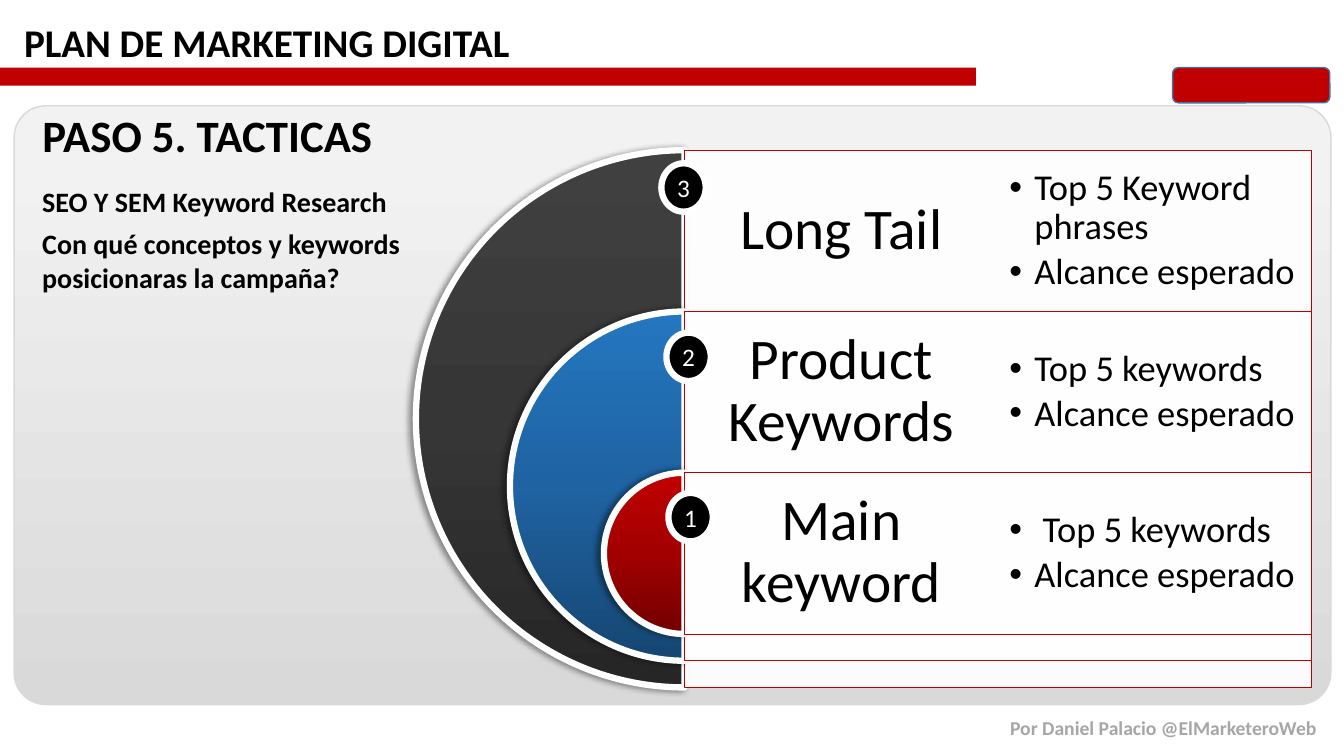
from copy import deepcopy
from dataclasses import dataclass

from lxml import etree
from pptx import Presentation
from pptx.dml.color import RGBColor
from pptx.enum.shapes import MSO_SHAPE
from pptx.enum.text import MSO_ANCHOR, MSO_AUTO_SIZE, PP_ALIGN
from pptx.oxml import parse_xml
from pptx.oxml.ns import qn
from pptx.util import Inches, Pt

RECT, ROUND = MSO_SHAPE.RECTANGLE, MSO_SHAPE.ROUNDED_RECTANGLE
PIE, OVAL = MSO_SHAPE.PIE, MSO_SHAPE.OVAL
LEFT, CENTER = PP_ALIGN.LEFT, PP_ALIGN.CENTER
TOP, MIDDLE = MSO_ANCHOR.TOP, MSO_ANCHOR.MIDDLE
NS = "http://schemas.openxmlformats.org/drawingml/2006/main"


@dataclass
class Theme:
    font: str = "Calibri"
    red: str = "C00000"
    black: str = "000000"
    white: str = "FFFFFF"
    gray: str = "A6A6A6"
    edge: str = "D9D9D9"
    blue: str = "43739E"
    title: int = 32
    head: int = 28
    note: int = 20
    foot: int = 14
    ring: int = 41
    item: int = 26
    badge: int = 18


theme = Theme()
prs = Presentation()
prs.slide_width, prs.slide_height = Inches(13.33), Inches(7.5)
slide = prs.slides.add_slide(prs.slide_layouts[5])
shapes = slide.shapes


def draw(kind, box, fill, line=None, width=1):
    """Add a preset shape; a list as fill gives gradient stops, bottom to top."""
    shape = shapes.add_shape(kind, *map(Inches, box))
    shape.shadow.inherit = False
    if isinstance(fill, list):
        shape.fill.gradient()
        shape.fill.gradient_angle = 90
        stops = shape.element.spPr.find(".//" + qn("a:gsLst"))
        for _ in fill[2:]:
            stops.append(deepcopy(stops[0]))
        for stop, (pos, color) in zip(shape.fill.gradient_stops, fill):
            stop.position = pos
            stop.color.rgb = RGBColor.from_string(color)
    else:
        shape.fill.solid()
        shape.fill.fore_color.rgb = RGBColor.from_string(fill)
    if line:
        shape.line.color.rgb = RGBColor.from_string(line)
        shape.line.width = Pt(width)
    else:
        shape.line.fill.background()
    return shape


def write(shape, lines, size, color=theme.black, bold=False, align=LEFT,
          anchor=TOP, pad=(0.1, 0.05), wrap=True, bullet=False, gap=1.0):
    frame = shape.text_frame
    frame.text = "\n".join(lines)
    form = {"word_wrap": wrap, "auto_size": MSO_AUTO_SIZE.NONE,
            "vertical_anchor": anchor,
            "margin_left": Inches(pad[0]), "margin_right": Inches(pad[0]),
            "margin_top": Inches(pad[1]), "margin_bottom": Inches(pad[1])}
    for name, value in form.items():
        setattr(frame, name, value)
    for par in frame.paragraphs:
        par.alignment, par.line_spacing = align, gap
        if bullet:
            par.space_after = Pt(4)
            props = par._p.get_or_add_pPr()
            props.set("marL", str(Inches(0.25)))
            props.set("indent", str(-Inches(0.25)))
            etree.SubElement(props, qn("a:buFont")).set("typeface", "Arial")
            etree.SubElement(props, qn("a:buChar")).set("char", "•")
        for run in par.runs:
            font = run.font
            font.name, font.size, font.bold = theme.font, Pt(size), bold
            font.color.rgb = RGBColor.from_string(color)


# Header, panel and footer
draw(RECT, (0, 0.67, 9.68, 0.18), theme.red)
panel = draw(ROUND, (0.14, 1.05, 13.06, 5.94),
             [(0, "D9D9D9"), (0.91, "F2F2F2")], theme.edge)
panel.adjustments[0] = 0.053

title = shapes.title
title.left, title.top = Inches(0.32), Inches(1.02)
title.width, title.height = Inches(7.72), Inches(0.64)
write(title, ["PASO 5. TACTICAS"], theme.title, bold=True)
panel.element.addnext(title.element)

labels = [
    ((0.14, 0.13, 5.08, 0.57), "PLAN DE MARKETING DIGITAL",
     theme.head, theme.black, False),
    ((9.92, 7.05, 3.27, 0.34), "Por Daniel Palacio @ElMarketeroWeb",
     theme.foot, theme.gray, False),
    ((0.32, 1.78, 3.65, 0.44), "SEO Y SEM Keyword Research",
     theme.note, theme.black, False),
    ((0.32, 2.2, 4.89, 1.11),
     "Con qué conceptos y keywords posicionaras la campaña?",
     theme.note, theme.black, True),
]
for box, text, size, color, wrap in labels:
    write(shapes.add_textbox(*map(Inches, box)), [text], size, color,
          bold=True, wrap=wrap)

# Nested half rings, each with its band, name and items
rings = [
    ("Long Tail", ["Top 5 Keyword phrases", "Alcance esperado"],
     ("262626", "363636", "404040")),
    ("Product Keywords", ["Top 5 keywords", "Alcance esperado"],
     ("164672", "1F63A2", "2476C0")),
    ("Main keyword", [" Top 5 keywords", "Alcance esperado"],
     ("720000", "A20000", "C00000")),
]
axis, first, step, half = 6.79, 1.49, 1.6, 3.11
for i, (name, items, tones) in enumerate(rings):
    top, size = first + step * i, 5.33 - 1.865 * i
    ring = draw(PIE, (axis - size / 2, top, size, size),
                list(zip((0, 0.5, 1), tones)), theme.white, 4.5)
    ring.adjustments[0], ring.adjustments[1] = 54, 162
    ring.element.spPr.find(qn("a:effectLst")).append(parse_xml(
        f'<a:outerShdw xmlns:a="{NS}" blurRad="{Pt(4)}" dist="{Pt(3)}" '
        f'dir="10800000" rotWithShape="0"><a:srgbClr val="{theme.black}">'
        '<a:alpha val="40000"/></a:srgbClr></a:outerShdw>'))
    band = draw(RECT, (axis, top, 2 * half, size), theme.white, theme.red, 0.5)
    tint = band.element.spPr.find(qn("a:solidFill"))[0]
    etree.SubElement(tint, qn("a:alpha")).set("val", "90000")
    write(shapes.add_textbox(*map(Inches, (axis, top, half, step))), [name],
          theme.ring, align=CENTER, anchor=MIDDLE, pad=(0.17, 0.17), gap=0.9)
    write(shapes.add_textbox(*map(Inches, (axis + half, top, half, step))),
          items, theme.item, anchor=MIDDLE, pad=(0.11, 0.11), bullet=True,
          gap=0.9)

# Number badges
for digit, x, y in [("1", 6.63, 4.89), ("2", 6.61, 3.3), ("3", 6.56, 1.62)]:
    badge = draw(OVAL, (x, y, 0.44, 0.48), theme.black, theme.white, 4.5)
    write(badge, [digit], theme.badge, theme.white, align=CENTER,
          anchor=MIDDLE, pad=(0, 0))

draw(ROUND, (11.63, 0.67, 1.56, 0.35), theme.red, theme.blue)

prs.save("out.pptx")
